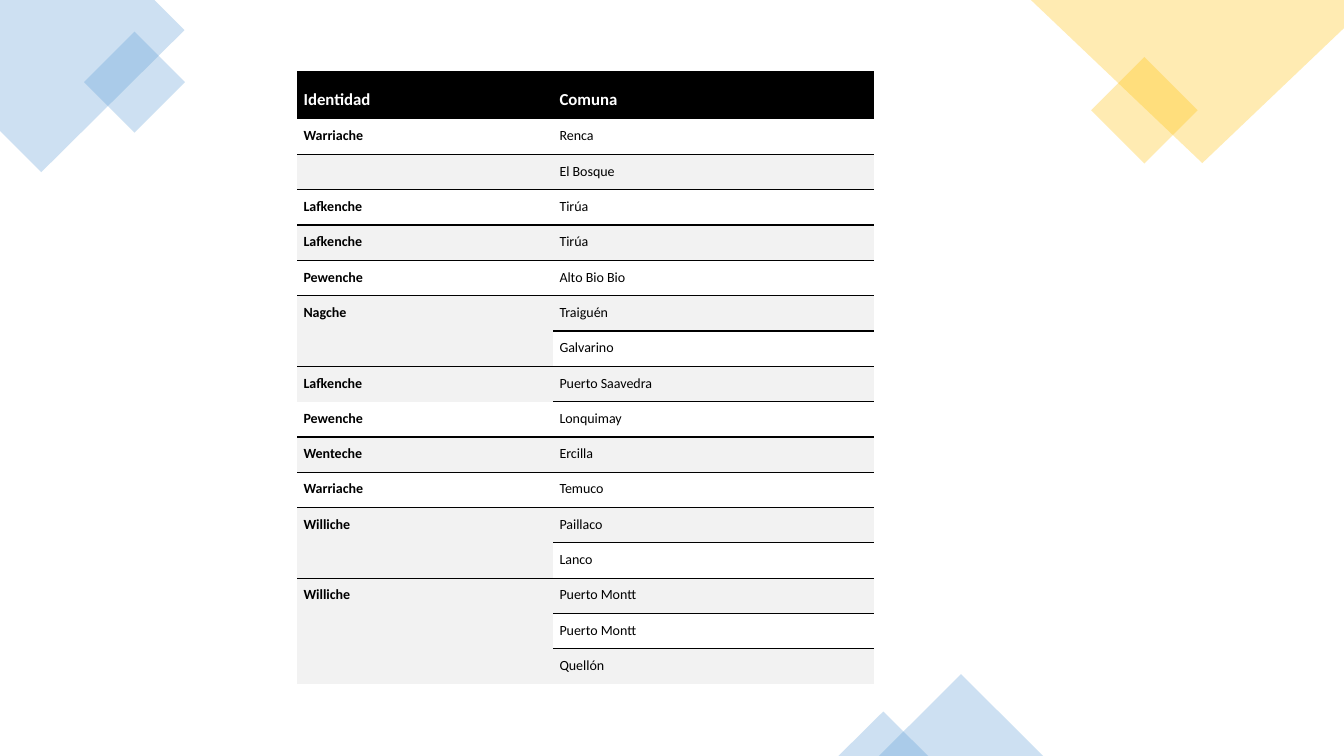
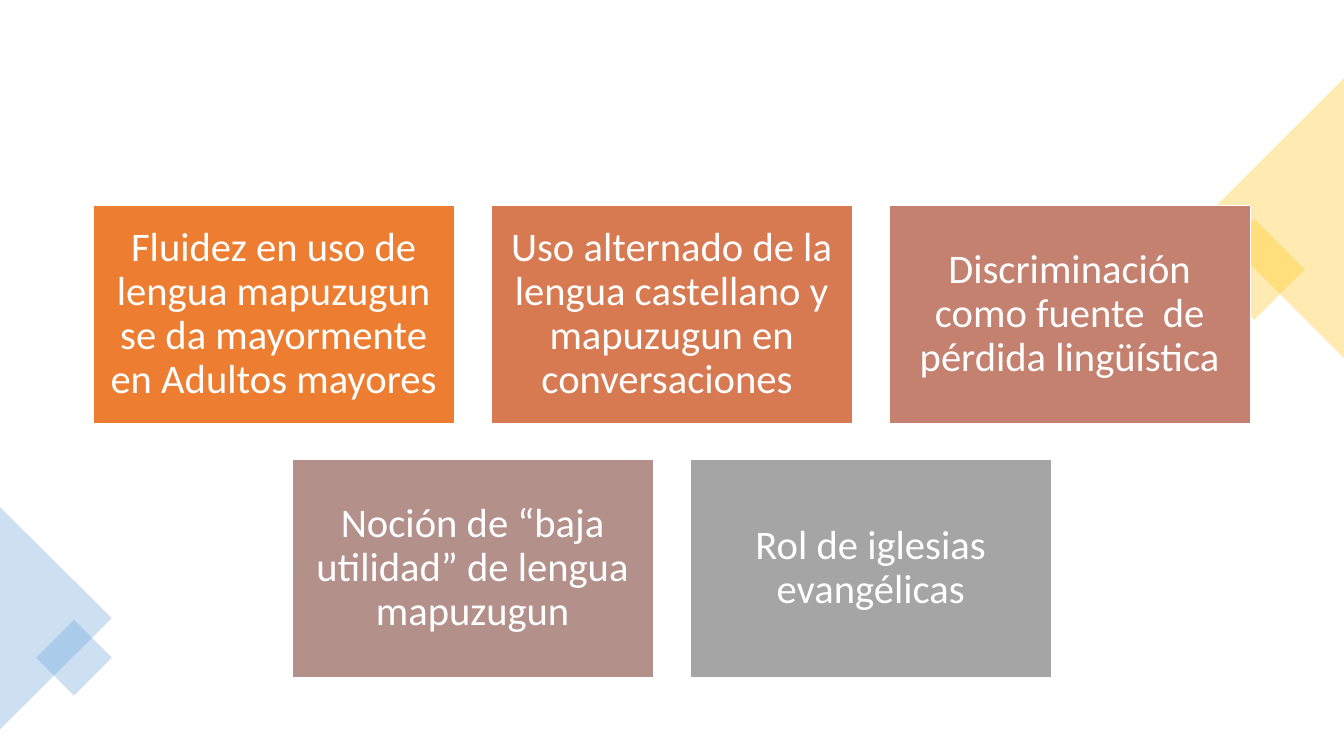
from lxml import etree
from pptx import Presentation, util as u
from pptx.dml.color import RGBColor
from pptx.enum import shapes, text
from pptx.oxml.ns import qn

COLORS = {"blue": "5B9BD5", "gold": "FFC000", "black": "000000", "white": "FFFFFF",
          "band": "F2F2F2", "orange": "ED7D31", "rust": "D87A51", "clay": "C48170",
          "mauve": "B4908B", "gray": "A5A5A5"}
RGB = {name: RGBColor.from_string(value) for name, value in COLORS.items()}
FONT = "Calibri"
RECT, TRI = shapes.MSO_SHAPE.RECTANGLE, shapes.MSO_SHAPE.ISOSCELES_TRIANGLE


def apply(obj, fmt):
    for name, value in fmt.items():
        setattr(obj, name, value)


def tint(sp, color):
    """Flat decoration: 30 % opaque fill, no outline, no shadow."""
    sp.shadow.inherit = False
    sp.fill.solid()
    sp.fill.fore_color.rgb = RGB[color]
    clr = sp._element.spPr.find(".//" + qn("a:srgbClr"))
    etree.SubElement(clr, qn("a:alpha"), val="30000")
    sp.line.fill.background()


prs = Presentation()
apply(prs, {"slide_width": u.Cm(33.87), "slide_height": u.Cm(19.05)})
slides = [prs.slides.add_slide(prs.slide_layouts[6]) for _ in range(2)]

# Corner decorations: cut-off squares on the first slide
corners = [
    ("blue", [(3.89, 0), (0, 0), (0, 3.3), (1.04, 4.34), (4.65, 0.76)]),
    ("gold", [(33.87, 0), (25.98, 0), (30.3, 4.11), (33.87, 0.71)]),
]
for color, points in corners:
    points = [(u.Cm(x), u.Cm(y)) for x, y in points]
    fb = slides[0].shapes.build_freeform(*points[0])
    fb.add_line_segments(points[1:], close=True)
    tint(fb.convert_to_shape(), color)

# Corner decorations: slide, kind, left, top, width, height, rotation, colour
decorations = [
    (0, RECT, 2.49, 1.17, 1.8, 1.8, 45, "blue"),
    (0, RECT, 27.89, 1.83, 1.9, 1.9, 45, "gold"),
    (0, TRI, 22.15, 16.99, 4.14, 2.06, 0, "blue"),
    (0, TRI, 21.13, 17.93, 2.26, 1.12, 0, "blue"),
    (1, RECT, 30.71, 5.89, 1.8, 1.8, 45, "gold"),
    (1, TRI, 28.58, 3.73, 7.04, 3.53, 270, "gold"),
    (1, TRI, -1.4, 14.17, 5.61, 2.82, 90, "blue"),
    (1, RECT, 1.19, 15.9, 1.35, 1.35, 45, "blue"),
]
for index, kind, x, y, w, h, rotation, color in decorations:
    sp = slides[index].shapes.add_shape(kind, u.Cm(x), u.Cm(y), u.Cm(w), u.Cm(h))
    sp.rotation = rotation
    tint(sp, color)

# Slide 1: table of identities and communes
rows = [
    ("Identidad", "Comuna"), ("Warriache", "Renca"), ("", "El Bosque"),
    ("Lafkenche", "Tirúa"), ("Lafkenche", "Tirúa"), ("Pewenche", "Alto Bio Bio"),
    ("Nagche", "Traiguén"), ("", "Galvarino"), ("Lafkenche", "Puerto Saavedra"),
    ("Pewenche", "Lonquimay"), ("Wenteche", "Ercilla"), ("Warriache", "Temuco"),
    ("Williche", "Paillaco"), ("", "Lanco"), ("Williche", "Puerto Montt"),
    ("", "Puerto Montt"), ("", "Quellón"),
]
merges = [(6, 7), (12, 13), (14, 16)]
unruled = {last + 1 for first, last in merges}  # no rule right below a merged cell
head_h, row_h, col_w = 1.22, 0.89, (6.45, 8.08)
frame = slides[0].shapes.add_table(
    len(rows), 2, u.Cm(7.49), u.Cm(1.78), u.Cm(sum(col_w)),
    u.Cm(head_h + row_h * (len(rows) - 1)))
tbl = frame.table
apply(tbl, {"first_row": False, "horz_banding": False})
style = tbl._tbl.tblPr.find(qn("a:tableStyleId"))
style.text = "{2D5ABB26-0587-4C30-8999-92F81FD0307C}"  # no style, no grid
for col, width in zip(tbl.columns, col_w):
    col.width = u.Cm(width)

for i, row in enumerate(rows):
    head, banded = i == 0, i > 0 and i % 2 == 0
    tbl.rows[i].height = u.Cm(head_h if head else row_h)
    for j, label in enumerate(row):
        cell = tbl.cell(i, j)
        apply(cell, {
            "margin_left": u.Cm(0.16), "margin_right": u.Cm(0.1),
            "margin_top": u.Cm(0.22 if head else 0), "margin_bottom": u.Cm(0.22),
            "vertical_anchor": text.MSO_ANCHOR.MIDDLE if head else text.MSO_ANCHOR.TOP})
        in_merge = j == 0 and any(a <= i <= b for a, b in merges)
        if head or banded or in_merge:
            cell.fill.solid()
            cell.fill.fore_color.rgb = RGB["black" if head else "band"]
        else:
            cell.fill.background()
        p = cell.text_frame.paragraphs[0]
        apply(p, {"alignment": text.PP_ALIGN.JUSTIFY, "line_spacing": 1.5})
        if label:
            r = p.add_run()
            r.text = label
            apply(r.font, {"name": FONT, "size": u.Pt(12 if head else 10),
                           "bold": head or j == 0})
            r.font.color.rgb = RGB["white" if head else "black"]
        else:  # keeps empty cells from stretching the row
            p._p.get_or_add_endParaRPr().set("sz", "1000")
        if banded and (j == 1 or i not in unruled and not (in_merge and not label)):
            ln = etree.Element(qn("a:lnT"), w=str(u.Pt(1)))
            fill = etree.SubElement(ln, qn("a:solidFill"))
            etree.SubElement(fill, qn("a:srgbClr"), val=COLORS["black"])
            cell._tc.get_or_add_tcPr().insert(0, ln)
for first, last in merges:
    tbl.cell(first, 0).merge(tbl.cell(last, 0))

# Slide 2: two centred rows of statement boxes
box_rows = [
    [("orange", "Fluidez en uso de lengua mapuzugun se da mayormente en Adultos mayores"),
     ("rust", "Uso alternado de la lengua castellano y mapuzugun en conversaciones "),
     ("clay", "Discriminación como fuente  de pérdida lingüística")],
    [("mauve", "Noción de “baja utilidad” de lengua mapuzugun"),
     ("gray", "Rol de iglesias evangélicas")],
]
box_w, box_h, gap, top, center = 9.12, 5.49, 0.91, 5.18, 16.93
for i, boxes in enumerate(box_rows):
    left = center - (len(boxes) * (box_w + gap) - gap) / 2
    for j, (color, label) in enumerate(boxes):
        sp = slides[1].shapes.add_shape(
            RECT, u.Cm(left + j * (box_w + gap)), u.Cm(top + i * (box_h + gap)),
            u.Cm(box_w), u.Cm(box_h))
        sp.shadow.inherit = False
        sp.fill.solid()
        sp.fill.fore_color.rgb = RGB[color]
        sp.line.color.rgb = RGB["white"]
        sp.line.width = u.Pt(1)
        tf = sp.text_frame
        apply(tf, {"word_wrap": True, "vertical_anchor": text.MSO_ANCHOR.MIDDLE,
                   "margin_left": u.Cm(0.3), "margin_right": u.Cm(0.3),
                   "margin_top": u.Cm(0.3), "margin_bottom": u.Cm(0.3)})
        p = tf.paragraphs[0]
        apply(p, {"alignment": text.PP_ALIGN.CENTER, "line_spacing": 0.9})
        r = p.add_run()
        r.text = label
        apply(r.font, {"name": FONT, "size": u.Pt(29)})
        r.font.color.rgb = RGB["white"]

prs.save("out.pptx")
